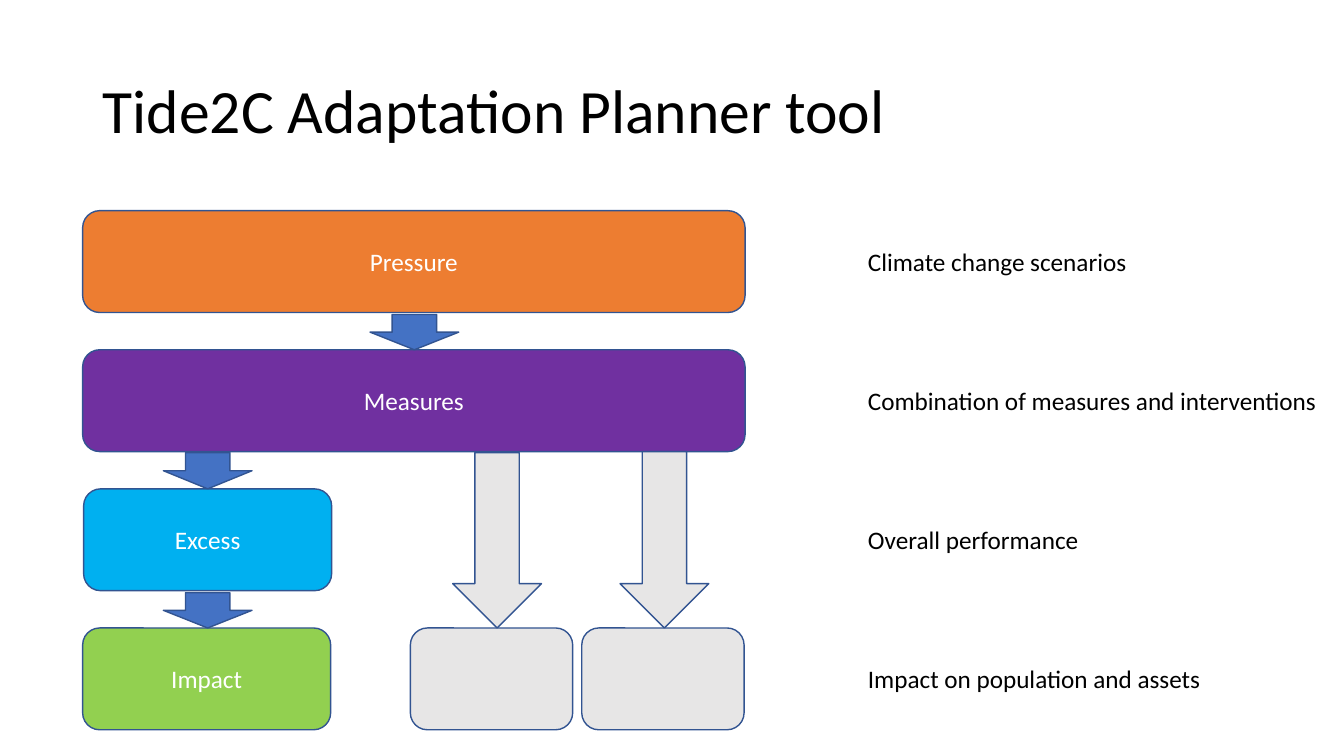
from pptx import Presentation
from pptx.dml.color import RGBColor
from pptx.enum import shapes, text
from pptx.util import Inches, Pt

BLACK = RGBColor(0x00, 0x00, 0x00)
WHITE = RGBColor(0xFF, 0xFF, 0xFF)
ORANGE = RGBColor(0xED, 0x7D, 0x31)
PURPLE = RGBColor(0x70, 0x30, 0xA0)
SKY = RGBColor(0x00, 0xB0, 0xF0)
GREEN = RGBColor(0x92, 0xD0, 0x50)
GREY = RGBColor(0xE7, 0xE6, 0xE6)
BLUE = RGBColor(0x44, 0x72, 0xC4)
OUTLINE = RGBColor(0x32, 0x54, 0x91)

TITLE = "Tide2C Adaptation Planner tool"
# (text, width) for each row
LABELS = [
    ("Climate change scenarios", 2.8),
    ("Combination of measures and interventions", 4.7),
    ("Overall performance", 2.31),
    ("Impact on population and assets", 3.54),
]
# (text, row, left, width, fill)
BOXES = [
    ("Pressure", 0, 0.82, 6.57, ORANGE),
    ("Measures", 1, 0.82, 6.57, PURPLE),
    ("Excess", 2, 0.83, 2.46, SKY),
    ("Impact", 3, 0.82, 2.46, GREEN),
    ("", 3, 4.07, 1.61, GREY),
    ("", 3, 5.77, 1.61, GREY),
]
# (from row, to row, centre, gap below the upper box, fill)
ARROWS = [
    (0, 1, 4.11, 0.02, BLUE),
    (1, 2, 2.06, 0.01, BLUE),
    (2, 3, 2.06, 0.02, BLUE),
    (1, 3, 4.93, 0.01, GREY),
    (1, 3, 6.59, 0, GREY),
]
ROW_TOP, ROW_PITCH, BOX_HEIGHT = 2.09, 1.38, 1.01
ARROW_WIDTH = 0.88
LABEL_LEFT, LABEL_HEIGHT = 8.51, 0.4


def row_top(row):
    return ROW_TOP + row * ROW_PITCH


def write(shape, content, size, color, align):
    shape.text_frame.text = content
    paragraph = shape.text_frame.paragraphs[0]
    paragraph.alignment = align
    font = paragraph.runs[0].font
    font.name, font.size, font.color.rgb = "Calibri", Pt(size), color


def add_block(group, kind, left, top, width, height, fill):
    shape = group.shapes.add_shape(
        kind, Inches(left), Inches(top), Inches(width), Inches(height))
    shape.shadow.inherit = False
    shape.fill.solid()
    shape.fill.fore_color.rgb = fill
    shape.line.color.rgb = OUTLINE
    shape.line.width = Pt(1)
    return shape


presentation = Presentation()
presentation.slide_width, presentation.slide_height = Inches(13.33), Inches(7.5)
slide = presentation.slides.add_slide(presentation.slide_layouts[5])

title = slide.shapes.title
title.left, title.top = Inches(0.92), Inches(0.4)
title.width, title.height = Inches(11.5), Inches(1.45)
write(title, TITLE, 44, BLACK, text.PP_ALIGN.LEFT)
title.text_frame.vertical_anchor = text.MSO_ANCHOR.MIDDLE
title.text_frame.paragraphs[0].line_spacing = 0.9

for row, (content, width) in enumerate(LABELS):
    top = row_top(row) + (BOX_HEIGHT - LABEL_HEIGHT) / 2
    label = slide.shapes.add_textbox(
        Inches(LABEL_LEFT), Inches(top), Inches(width), Inches(LABEL_HEIGHT))
    write(label, content, 18, BLACK, text.PP_ALIGN.LEFT)
    label.text_frame.word_wrap = False
    label.text_frame.auto_size = text.MSO_AUTO_SIZE.SHAPE_TO_FIT_TEXT

diagram = slide.shapes.add_group_shape()
for content, row, left, width, fill in BOXES:
    box = add_block(diagram, shapes.MSO_SHAPE.ROUNDED_RECTANGLE,
                    left, row_top(row), width, BOX_HEIGHT, fill)
    if content:
        write(box, content, 18, WHITE, text.PP_ALIGN.CENTER)
        box.text_frame.vertical_anchor = text.MSO_ANCHOR.MIDDLE

for start, end, centre, gap, fill in ARROWS:
    top = row_top(start) + BOX_HEIGHT + gap
    add_block(diagram, shapes.MSO_SHAPE.DOWN_ARROW, centre - ARROW_WIDTH / 2,
              top, ARROW_WIDTH, row_top(end) - top, fill)

presentation.save("out.pptx")
